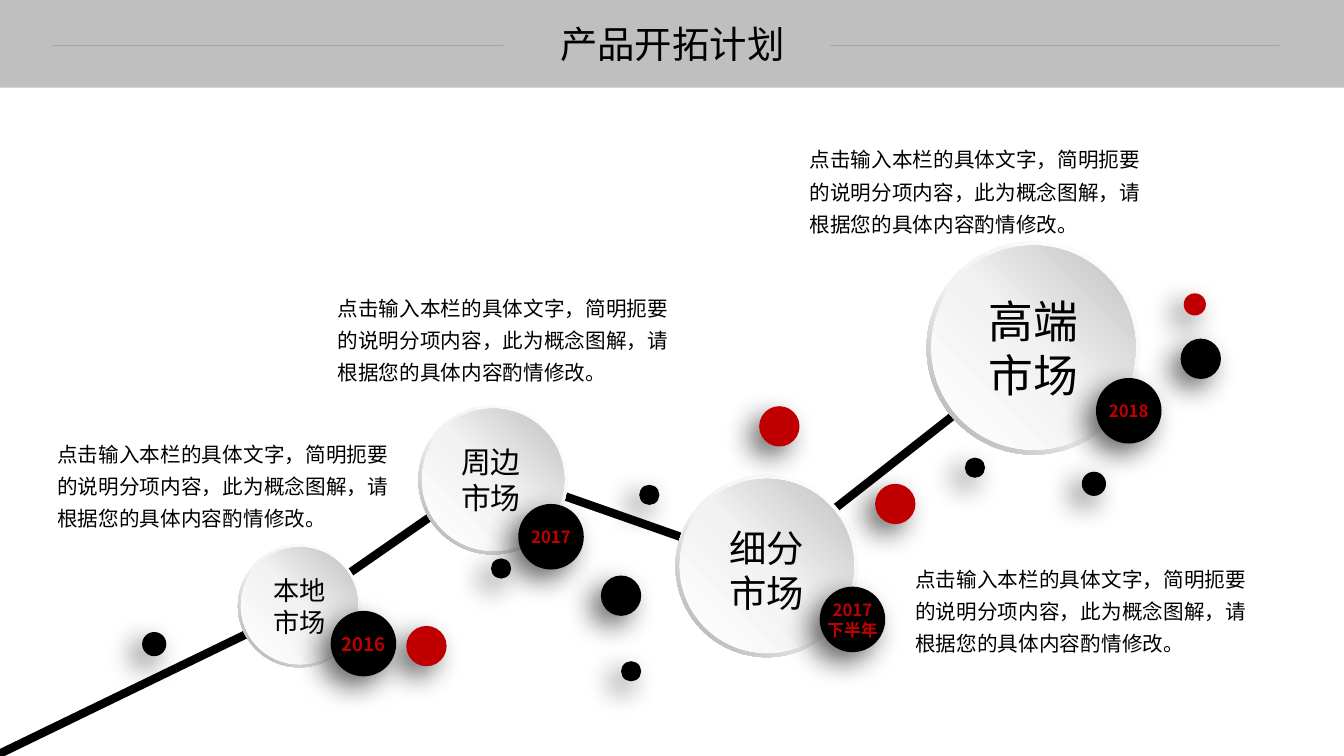
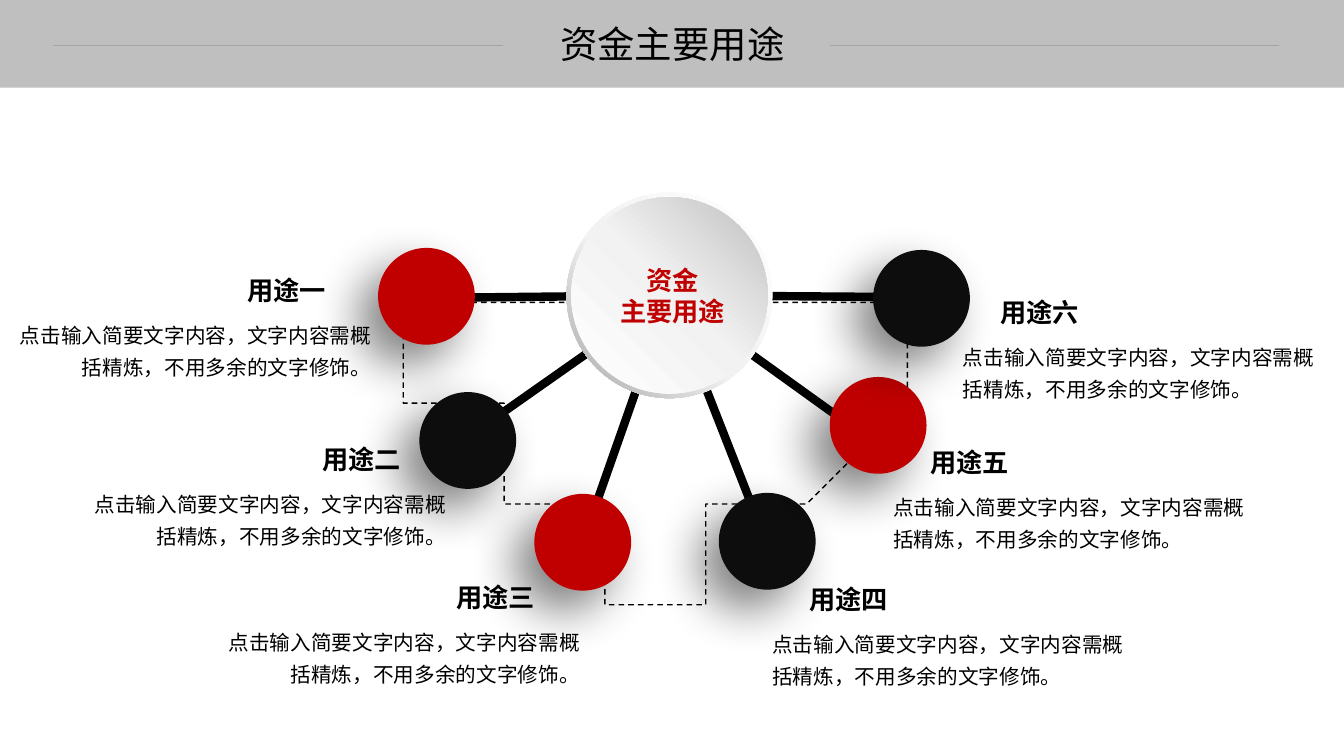
from dataclasses import dataclass
from itertools import pairwise
from typing import Any

from lxml import etree
from pptx import Presentation
from pptx import util as u
from pptx.dml import color as dml
from pptx.enum import dml as line_styles
from pptx.enum import shapes, text
from pptx.oxml import ns

COLORS = {
    "black": "000000",
    "ink": "0D0D0D",
    "red": "C00000",
    "band": "BFBFBF",
    "rule": "A5A5A5",
}
FONT = "Noto Sans CJK SC"
RING_STOPS = ((0, "FFFFFF"), (55, "F2F2F2"), (100, "A6A6A6"))
DISC_STOPS = ((0, "FFFFFF"), (51, "F2F2F2"), (100, "BFBFBF"))
MARKET_TEXT = "点击输入本栏的具体文字，简明扼要的说明分项内容，此为概念图解，请根据您的具体内容酌情修改。"
USE_TEXT = "点击输入简要文字内容，文字内容需概括精炼，不用多余的文字修饰。"
Point = tuple[float, float]


@dataclass(frozen=True)
class Shadow:
    opacity: int
    blur: float
    distance: float


@dataclass(frozen=True)
class Medallion:
    x: float
    y: float
    size: float
    label: str
    points: float
    color: str = "black"
    bold: bool = False
    shift: Point = (0, 0)


@dataclass(frozen=True)
class Ball:
    x: float
    y: float
    size: float
    color: str = "black"
    label: str = ""
    points: float = 12


@dataclass(frozen=True)
class Use:
    title: str
    x: float
    y: float
    ball: Ball
    rod_end: Point
    on_left: bool


DOT_SHADOW = Shadow(60, 20, 10)
BALL_SHADOW = Shadow(50, 35, 20)

MARKETS = (
    Medallion(2.36, 5.4, 1.22, "本地\n市场", 18.7),
    Medallion(4.15, 4.02, 1.48, "周边\n市场", 21.3, shift=(-0.02, 0)),
    Medallion(6.7, 4.71, 1.81, "细分\n市场", 26.7, shift=(0, 0.04)),
    Medallion(9.19, 2.39, 2.12, "高端\n市场", 32),
)
ROUTE = ((-0.05, 7.5), (2.94, 6.05), (4.91, 4.68), (7.56, 5.61), (10.21, 3.53))
MARKET_TEXT_SPOTS = ((3.25, 2.81), (0.47, 4.26), (8.98, 5.5), (7.93, 1.34))
MARKET_BALLS = (
    Ball(3.28, 6.06, 0.65, label="2016", points=13.3),
    Ball(8.13, 5.82, 0.65, label="2017\n下半年"),
    Ball(5.14, 5, 0.65, label="2017"),
    Ball(10.87, 3.75, 0.65, label="2018"),
    Ball(6.34, 4.81, 0.2),
    Ball(5.96, 5.71, 0.4),
    Ball(6.16, 6.56, 0.2),
    Ball(4.03, 6.21, 0.4, "red"),
    Ball(4.87, 5.54, 0.2),
    Ball(8.68, 4.8, 0.4, "red"),
    Ball(10.73, 4.68, 0.24),
    Ball(9.57, 4.54, 0.2),
    Ball(7.53, 4.03, 0.4, "red"),
    Ball(11.71, 3.36, 0.4),
    Ball(11.74, 2.91, 0.22, "red"),
    Ball(1.41, 6.27, 0.24),
)

HUB = Medallion(5.62, 1.91, 2.04, "资金\n主要用途", 18.7, "red", True, (0.03, 0))
HUB_CENTER = (6.64, 2.93)
USES = (
    Use("用途一", 2.35, 2.67, Ball(3.75, 2.46, 0.96, "red"), (3.85, 2.96), True),
    Use("用途二", 3.09, 4.35, Ball(4.16, 3.89, 0.96, "ink"), (4.45, 4.47), True),
    Use("用途三", 4.42, 5.72, Ball(5.3, 4.9, 0.96, "red"), (5.73, 5.52), True),
    Use("用途四", 7.93, 5.74, Ball(7.13, 4.89, 0.96, "ink"), (7.62, 5.43), False),
    Use("用途五", 9.13, 4.38, Ball(8.23, 3.74, 0.96, "red"), (8.78, 4.47), False),
    Use("用途六", 9.82, 2.89, Ball(8.66, 2.48, 0.96, "ink"), (9.35, 2.95), False),
)
ARC_START = (4.21, 2.94)
ARC_CURVES = (
    ((4.58, 2.96), (8.77, 2.89), (9.2, 3)),
    ((9.28, 3.33), (8.33, 5.49), (6.65, 5.56)),
    ((4.98, 5.63), (3.83, 2.93), (4.21, 2.94)),
)


def rgb(name: str) -> dml.RGBColor:
    return dml.RGBColor.from_string(COLORS[name])


def write(
    frame: Any,
    content: str,
    *,
    size: float,
    color: str = "black",
    bold: bool = False,
    align: text.PP_ALIGN = text.PP_ALIGN.LEFT,
    spacing: float | None = None,
    wrap: bool = True,
    middle: bool = False,
) -> None:
    frame.word_wrap = wrap
    frame.vertical_anchor = text.MSO_ANCHOR.MIDDLE if middle else text.MSO_ANCHOR.TOP
    for index, line in enumerate(content.split("\n")):
        para = frame.add_paragraph() if index else frame.paragraphs[0]
        para.alignment = align
        if spacing:
            para.line_spacing = spacing
        span = para.add_run()
        span.text = line
        span.font.size = u.Pt(size)
        span.font.bold = bold
        span.font.name = FONT
        span.font.color.rgb = rgb(color)
        east_asian = etree.SubElement(span.font._element, ns.qn("a:ea"))
        east_asian.set("typeface", FONT)


def add_box(parent: Any, x: float, y: float, width: float, height: float) -> Any:
    return parent.add_textbox(
        u.Inches(x), u.Inches(y), u.Inches(width), u.Inches(height)
    ).text_frame


def add_plain(
    parent: Any, kind: Any, x: float, y: float, width: float, height: float
) -> Any:
    shape = parent.add_shape(
        kind, u.Inches(x), u.Inches(y), u.Inches(width), u.Inches(height)
    )
    shape.line.fill.background()
    shape.shadow.inherit = False
    return shape


def fill_solid(shape: Any, color: str) -> None:
    shape.fill.solid()
    shape.fill.fore_color.rgb = rgb(color)


def fill_gradient(shape: Any, stops: tuple, angle: int) -> None:
    shape.fill.background()
    properties = shape._element.spPr
    gradient = etree.Element(ns.qn("a:gradFill"), rotWithShape="1")
    stop_list = etree.SubElement(gradient, ns.qn("a:gsLst"))
    for position, value in stops:
        stop = etree.SubElement(stop_list, ns.qn("a:gs"), pos=str(position * 1000))
        etree.SubElement(stop, ns.qn("a:srgbClr"), val=value)
    etree.SubElement(gradient, ns.qn("a:lin"), ang=str(angle * 60000), scaled="0")
    properties.replace(properties.find(ns.qn("a:noFill")), gradient)


def cast_shadow(shape: Any, shadow: Shadow) -> None:
    effects = shape._element.spPr.find(ns.qn("a:effectLst"))
    outer = etree.SubElement(
        effects,
        ns.qn("a:outerShdw"),
        blurRad=str(u.Pt(shadow.blur)),
        dist=str(u.Pt(shadow.distance)),
        dir=str(135 * 60000),
        algn="tr",
        rotWithShape="0",
    )
    tint = etree.SubElement(outer, ns.qn("a:srgbClr"), val=COLORS["black"])
    etree.SubElement(tint, ns.qn("a:alpha"), val=str(shadow.opacity * 1000))


def add_line(
    page: Any, start: Point, end: Point, color: str = "black", width: float = 6
) -> None:
    line = page.shapes.add_connector(
        shapes.MSO_CONNECTOR.STRAIGHT, *(u.Inches(value) for value in start + end)
    )
    line.line.color.rgb = rgb(color)
    line.line.width = u.Pt(width)
    etree.SubElement(line._element.spPr, ns.qn("a:effectLst"))


def add_ball(page: Any, ball: Ball, shadow: Shadow) -> None:
    shape = add_plain(
        page.shapes, shapes.MSO_SHAPE.OVAL, ball.x, ball.y, ball.size, ball.size
    )
    fill_solid(shape, ball.color)
    cast_shadow(shape, shadow)
    if ball.label:
        write(shape.text_frame, ball.label, size=ball.points, color="red", bold=True,
              align=text.PP_ALIGN.CENTER, wrap=False, middle=True)


def add_medallion(page: Any, item: Medallion) -> None:
    group = page.shapes.add_group_shape().shapes
    ring = add_plain(
        group, shapes.MSO_SHAPE.DONUT, item.x, item.y, item.size, item.size
    )
    ring.adjustments[0] = 0.05
    fill_gradient(ring, RING_STOPS, 135)
    inset = item.size * 0.02 + 0.005
    inner = item.size - 2 * inset
    disc = add_plain(
        group, shapes.MSO_SHAPE.OVAL, item.x + inset, item.y + inset, inner, inner
    )
    fill_gradient(disc, DISC_STOPS, 315)
    dx, dy = item.shift
    label = add_box(group, item.x + dx, item.y + dy, item.size, item.size)
    write(label, item.label, size=item.points, color=item.color, bold=item.bold,
          align=text.PP_ALIGN.CENTER, middle=True)


def curve_point(corners: tuple, t: float) -> Point:
    weights = ((1 - t) ** 3, 3 * t * (1 - t) ** 2, 3 * t * t * (1 - t), t**3)
    x, y = (sum(w * c[axis] for w, c in zip(weights, corners)) for axis in (0, 1))
    return x, y


def add_arc(page: Any, steps: int = 40) -> None:
    points = []
    start = ARC_START
    for curve in ARC_CURVES:
        points += [curve_point((start, *curve), n / steps) for n in range(1, steps + 1)]
        start = curve[-1]
    builder = page.shapes.build_freeform(*ARC_START, scale=u.Inches(1))
    builder.add_line_segments(points, close=True)
    arc = builder.convert_to_shape()
    arc.fill.background()
    arc.shadow.inherit = False
    arc.line.color.rgb = rgb("black")
    arc.line.width = u.Pt(1)
    arc.line.dash_style = line_styles.MSO_LINE.DASH


def add_page(deck: Any, title: str) -> Any:
    page = deck.slides.add_slide(deck.slide_layouts[6])
    band = add_plain(page.shapes, shapes.MSO_SHAPE.RECTANGLE, 0, 0, 13.33, 0.87)
    fill_solid(band, "band")
    for left in (0.53, 8.23):
        add_line(page, (left, 0.45), (left + 4.46, 0.45), "rule", 0.75)
    write(add_box(page.shapes, 5.41, 0.16, 2.52, 0.55), title, size=26.7,
          align=text.PP_ALIGN.CENTER)
    return page


def build_markets(deck: Any) -> None:
    page = add_page(deck, "产品开拓计划")
    for start, end in pairwise(ROUTE):
        add_line(page, start, end)
    for market in MARKETS:
        add_medallion(page, market)
    for x, y in MARKET_TEXT_SPOTS:
        write(add_box(page.shapes, x, y, 3.57, 1.06), MARKET_TEXT, size=14.7, spacing=1.3)
    for ball in MARKET_BALLS:
        add_ball(page, ball, DOT_SHADOW)


def build_uses(deck: Any) -> None:
    page = add_page(deck, "资金主要用途")
    add_arc(page)
    for use in USES:
        add_line(page, HUB_CENTER, use.rod_end)
    for use in USES:
        add_ball(page, use.ball, BALL_SHADOW)
    for use in USES:
        write(add_box(page.shapes, use.x, use.y, 0.99, 0.42), use.title, size=18.7,
              bold=True, wrap=False,
              align=text.PP_ALIGN.CENTER if use.on_left else text.PP_ALIGN.LEFT)
        body_x = use.x - (2.3 if use.on_left else 0.37)
        write(add_box(page.shapes, body_x, use.y + 0.41, 3.73, 0.74), USE_TEXT, size=14.7,
              spacing=1.3,
              align=text.PP_ALIGN.RIGHT if use.on_left else text.PP_ALIGN.LEFT)
    add_medallion(page, HUB)


def main() -> None:
    deck = Presentation()
    deck.slide_width, deck.slide_height = u.Inches(13.33), u.Inches(7.5)
    build_markets(deck)
    build_uses(deck)
    deck.save("out.pptx")


if __name__ == "__main__":
    main()
